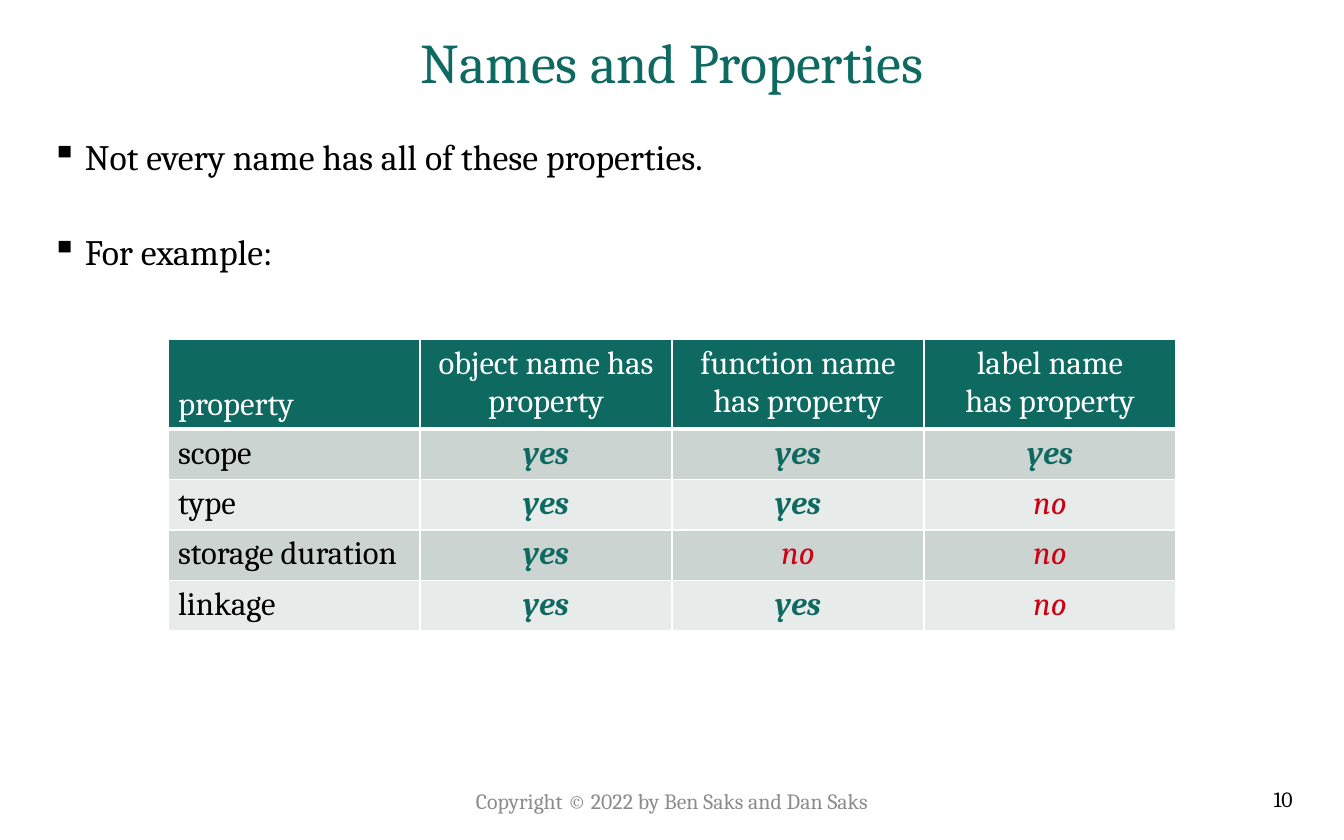
from lxml import etree
from pptx import Presentation
from pptx.dml.color import RGBColor
from pptx.enum.text import MSO_ANCHOR, PP_ALIGN
from pptx.oxml.ns import qn
from pptx.util import Inches, Pt

LEFT, CENTER, RIGHT = PP_ALIGN.LEFT, PP_ALIGN.CENTER, PP_ALIGN.RIGHT
TOP, MIDDLE, BOTTOM = MSO_ANCHOR.TOP, MSO_ANCHOR.MIDDLE, MSO_ANCHOR.BOTTOM

FONT = "Cambria"
GREEN, RED, BLACK, WHITE, GRAY = "0E6961", "CD0014", "000000", "FFFFFF", "8C8C8C"
BANDS = ["CCD4D2", "E7EBEA"]

TITLE = "Names and Properties"
BULLETS = ["Not every name has all of these properties.", "For example:"]
HEADER = ["property", "object name has property", "function name has property",
          "label name\nhas property"]
ROWS = [
    ["scope", "yes", "yes", "yes"],
    ["type", "yes", "yes", "no"],
    ["storage duration", "yes", "no", "no"],
    ["linkage", "yes", "yes", "no"],
]
COPYRIGHT = "Copyright © 2022 by Ben Saks and Dan Saks"
PAGE_NUMBER = "10"

TABLE_LEFT, TABLE_TOP = 1.5, 3.03
COLUMN_WIDTH, HEADER_HEIGHT, ROW_HEIGHT = 2.25, 0.78, 0.44


def color(hex_string):
    return RGBColor.from_string(hex_string)


def write(text_frame, text, size, text_color, align, bold=False, italic=False):
    text_frame.text = text
    for paragraph in text_frame.paragraphs:
        paragraph.alignment = align
        for run in paragraph.runs:
            font = run.font
            font.name, font.size = FONT, Pt(size)
            font.bold, font.italic = bold, italic
            font.color.rgb = color(text_color)


def add_text(slide, box, text, size, text_color, align, anchor):
    shape = slide.shapes.add_textbox(*map(Inches, box))
    text_frame = shape.text_frame
    text_frame.word_wrap = True
    text_frame.vertical_anchor = anchor
    write(text_frame, text, size, text_color, align)
    return text_frame


def add_bullet(paragraph):
    properties = paragraph._p.get_or_add_pPr()
    properties.set("marL", str(Inches(0.3)))
    properties.set("indent", str(-Inches(0.3)))
    etree.SubElement(properties, qn("a:buChar")).set("char", "▪")


def add_borders(cell, bottom_width):
    properties = cell._tc.get_or_add_tcPr()
    for side, width in (("L", 1), ("R", 1), ("T", 1), ("B", bottom_width)):
        line = etree.SubElement(properties, qn(f"a:ln{side}"), w=str(Pt(width)))
        fill = etree.SubElement(line, qn("a:solidFill"))
        etree.SubElement(fill, qn("a:srgbClr"), val=WHITE)


def fill_cell(cell, row, column, text):
    is_header = row == 0
    add_borders(cell, 3 if is_header else 1)
    cell.fill.solid()
    cell.fill.fore_color.rgb = color(GREEN if is_header else BANDS[(row - 1) % 2])
    cell.margin_left = cell.margin_right = Inches(0.09)
    cell.margin_top = cell.margin_bottom = Inches(0.05)
    cell.vertical_anchor = BOTTOM if is_header and column == 0 else TOP
    is_answer = not is_header and column > 0
    if is_header:
        text_color = WHITE
    elif is_answer:
        text_color = GREEN if text == "yes" else RED
    else:
        text_color = BLACK
    write(cell.text_frame, text, 21, text_color, CENTER if column else LEFT,
          bold=is_answer and text == "yes", italic=is_answer)


def add_property_table(slide):
    rows = [HEADER] + ROWS
    heights = [HEADER_HEIGHT] + [ROW_HEIGHT] * len(ROWS)
    frame = slide.shapes.add_table(
        len(rows), len(HEADER), Inches(TABLE_LEFT), Inches(TABLE_TOP),
        Inches(COLUMN_WIDTH * len(HEADER)), Inches(sum(heights)))
    table = frame.table
    for column in table.columns:
        column.width = Inches(COLUMN_WIDTH)
    for row, (texts, height) in enumerate(zip(rows, heights)):
        table.rows[row].height = Inches(height)
        for column, text in enumerate(texts):
            fill_cell(table.cell(row, column), row, column, text)


def main():
    presentation = Presentation()
    presentation.slide_width, presentation.slide_height = Inches(12), Inches(7.5)
    slide = presentation.slides.add_slide(presentation.slide_layouts[6])

    add_text(slide, (0.36, 0.25, 11.28, 0.6), TITLE, 36, GREEN, CENTER, MIDDLE)
    body = add_text(slide, (0.36, 1.15, 11.28, 5.8), "\n".join(BULLETS),
                    23, BLACK, LEFT, TOP)
    for index, paragraph in enumerate(body.paragraphs):
        if index:
            paragraph.space_before = Pt(34)
        add_bullet(paragraph)
    add_text(slide, (9.72, 6.95, 1.92, 0.35), PAGE_NUMBER, 14, BLACK, RIGHT, BOTTOM)
    add_property_table(slide)
    add_text(slide, (2.4, 6.95, 7.2, 0.4), COPYRIGHT, 14, GRAY, CENTER, MIDDLE)
    presentation.save("out.pptx")


if __name__ == "__main__":
    main()
